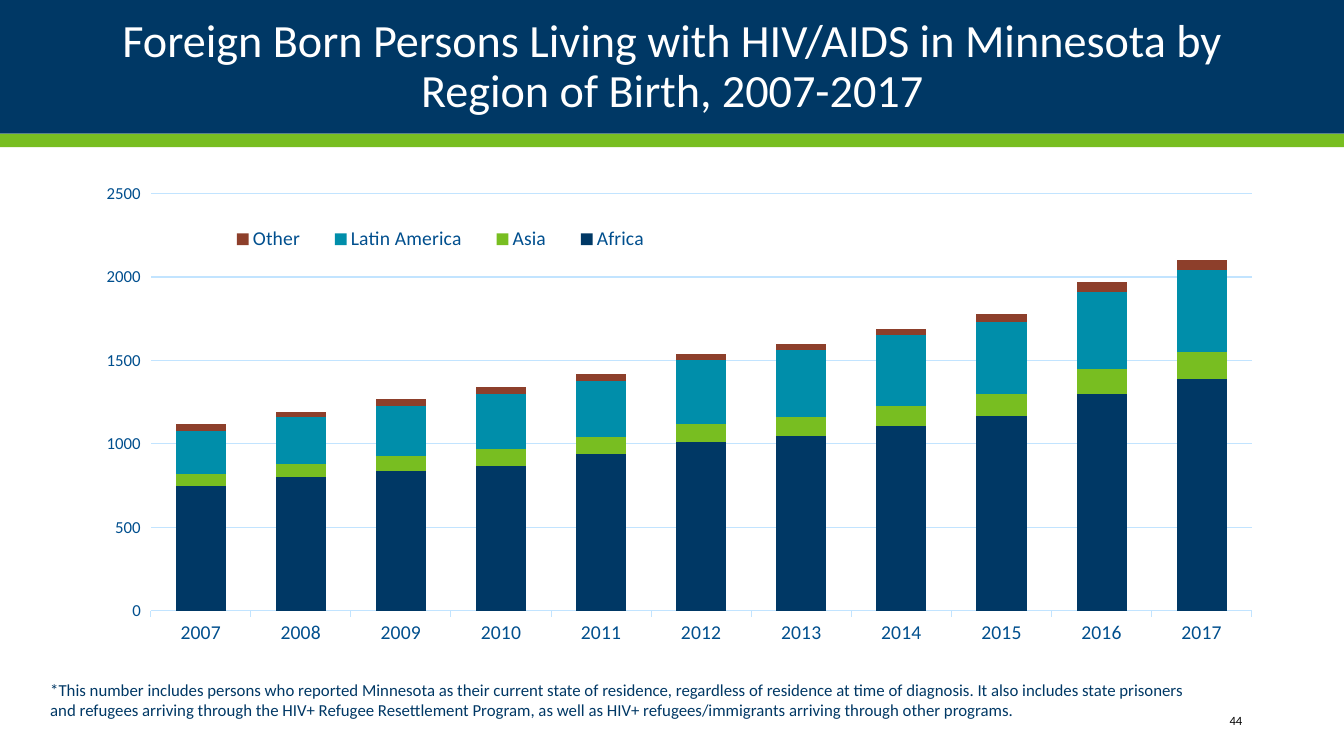
from lxml import etree
from pptx import Presentation
from pptx.chart.data import CategoryChartData
from pptx.dml.color import RGBColor
from pptx.enum.chart import XL_CHART_TYPE, XL_LEGEND_POSITION, XL_TICK_MARK
from pptx.enum.shapes import MSO_SHAPE
from pptx.enum.text import MSO_ANCHOR, PP_ALIGN
from pptx.oxml.ns import qn
from pptx.util import Inches, Pt

W, H = 13.33, 7.5
FONT = "Calibri"
COLORS = {"navy": "003865", "green": "78BE21", "teal": "008EAA", "rust": "8D3F2B",
          "label": "004F8E", "grid": "C2E4FF", "white": "FFFFFF", "black": "000000"}
YEARS = [str(year) for year in range(2007, 2018)]
REGIONS = [
    ("Africa", "navy", [750, 800, 840, 870, 940, 1010, 1050, 1110, 1170, 1300, 1390]),
    ("Asia", "green", [70, 80, 90, 100, 100, 110, 110, 120, 130, 150, 160]),
    ("Latin America", "teal", [260, 280, 300, 330, 340, 380, 400, 420, 430, 460, 490]),
    ("Other", "rust", [40, 30, 40, 40, 40, 40, 40, 40, 50, 60, 60]),
]
TITLE = "Foreign Born Persons Living with HIV/AIDS in Minnesota by Region of Birth, 2007-2017"
NOTE = ("*This number includes persons who reported Minnesota as their current state of "
        "residence, regardless of residence at time of diagnosis. It also includes state "
        "prisoners and refugees arriving through the HIV+ Refugee Resettlement Program, as "
        "well as HIV+ refugees/immigrants arriving through other programs.")


def rgb(name):
    """Return a named colour."""
    return RGBColor.from_string(COLORS[name])


def set_font(font, size, color):
    """Apply the slide's typeface with a size and colour."""
    font.name, font.size = FONT, Pt(size)
    font.color.rgb = rgb(color)


def add_text(s, box, text, size, color, align=PP_ALIGN.LEFT, anchor=MSO_ANCHOR.TOP):
    """Add a wrapped one-paragraph text box and return its paragraph."""
    tf = s.shapes.add_textbox(*map(Inches, box)).text_frame
    tf.word_wrap = True
    tf.vertical_anchor = anchor
    p = tf.paragraphs[0]
    p.text, p.alignment = text, align
    set_font(p.font, size, color)
    return p


def add_band(s, box, color):
    """Add a plain filled rectangle."""
    sp = s.shapes.add_shape(MSO_SHAPE.RECTANGLE, *map(Inches, box))
    sp.shadow.inherit = False
    sp.fill.solid()
    sp.fill.fore_color.rgb = rgb(color)
    sp.line.fill.background()


def add_header(s, x, y, w, h):
    """Add the title band with its green stripe below."""
    stripe = h / 11
    add_band(s, (x, y, w, h - stripe), "navy")
    add_band(s, (x, y + h - stripe, w, stripe), "green")
    p = add_text(s, (x + 0.92, y + 0.17, w - 1.83, 1), TITLE, 33, "white",
                 PP_ALIGN.CENTER, MSO_ANCHOR.MIDDLE)
    p.line_spacing = 0.9


def make_layout(x, y, w, h, inner=False):
    """Build a manual chart layout from shares of the chart."""
    layout = etree.Element(qn("c:layout"))
    manual = etree.SubElement(layout, qn("c:manualLayout"))
    target = [("layoutTarget", "inner")] if inner else []
    for tag, val in target + [("xMode", "edge"), ("yMode", "edge"),
                              ("x", x), ("y", y), ("w", w), ("h", h)]:
        etree.SubElement(manual, qn(f"c:{tag}")).set("val", str(val))
    return layout


def drop_layout(element):
    """Remove any layout the chart part already has."""
    for layout in element.findall(qn("c:layout")):
        element.remove(layout)


def style_axis(axis, size):
    """Set label font and outer tick marks."""
    set_font(axis.tick_labels.font, size, "label")
    axis.major_tick_mark = XL_TICK_MARK.OUTSIDE
    axis.minor_tick_mark = XL_TICK_MARK.NONE


def style_line(line):
    """Give an axis or grid line its thin pale stroke."""
    line.color.rgb = rgb("grid")
    line.width = Pt(0.75)


def add_region_chart(s, x, y, w, h):
    """Add the stacked columns by region of birth."""
    data = CategoryChartData()
    data.categories = YEARS
    for name, _, values in REGIONS:
        data.add_series(name, values)
    chart = s.shapes.add_chart(XL_CHART_TYPE.COLUMN_STACKED,
                               *map(Inches, (x, y, w, h)), data).chart
    chart.has_title = False
    set_font(chart.font, 10, "navy")
    plot = chart.plots[0]
    plot.gap_width, plot.overlap, plot.vary_by_categories = 100, 100, False
    for series, (_, color, _) in zip(plot.series, REGIONS):
        series.format.fill.solid()
        series.format.fill.fore_color.rgb = rgb(color)

    years, counts = chart.category_axis, chart.value_axis
    style_axis(years, 14)
    style_axis(counts, 12)
    style_line(years.format.line)
    counts.format.line.fill.background()
    style_line(counts.major_gridlines.format.line)
    counts.minimum_scale, counts.maximum_scale, counts.major_unit = 0, 2500, 500

    chart.has_legend = True
    legend = chart.legend
    legend.position = XL_LEGEND_POSITION.RIGHT
    legend.include_in_layout = False
    set_font(legend.font, 14, "label")
    drop_layout(legend._element)
    legend._element.find(qn("c:legendPos")).addnext(make_layout(0.1, 0.09, 0.4, 0.09))
    area = chart._chartSpace.find(".//" + qn("c:plotArea"))
    drop_layout(area)
    area.insert(0, make_layout(0.05, 0.04, 0.95, 0.87, inner=True))


def add_footer(s, x, y, w, h):
    """Add the footnote and the slide number."""
    add_text(s, (x, y, w, h), NOTE, 12, "navy")
    add_text(s, (x + w - 1.08, y + 0.26, 1.6, 0.4), "44", 9, "black",
             PP_ALIGN.RIGHT, MSO_ANCHOR.MIDDLE)


def main():
    """Build and save the slide."""
    prs = Presentation()
    prs.slide_width, prs.slide_height = Inches(W), Inches(H)
    s = prs.slides.add_slide(prs.slide_layouts[6])
    add_header(s, 0, 0, W, 1.46)
    add_region_chart(s, 0.92, 1.73, 11.5, 4.76)
    add_footer(s, 0.4, 6.69, 11.5, 0.86)
    prs.save("out.pptx")


if __name__ == "__main__":
    main()
